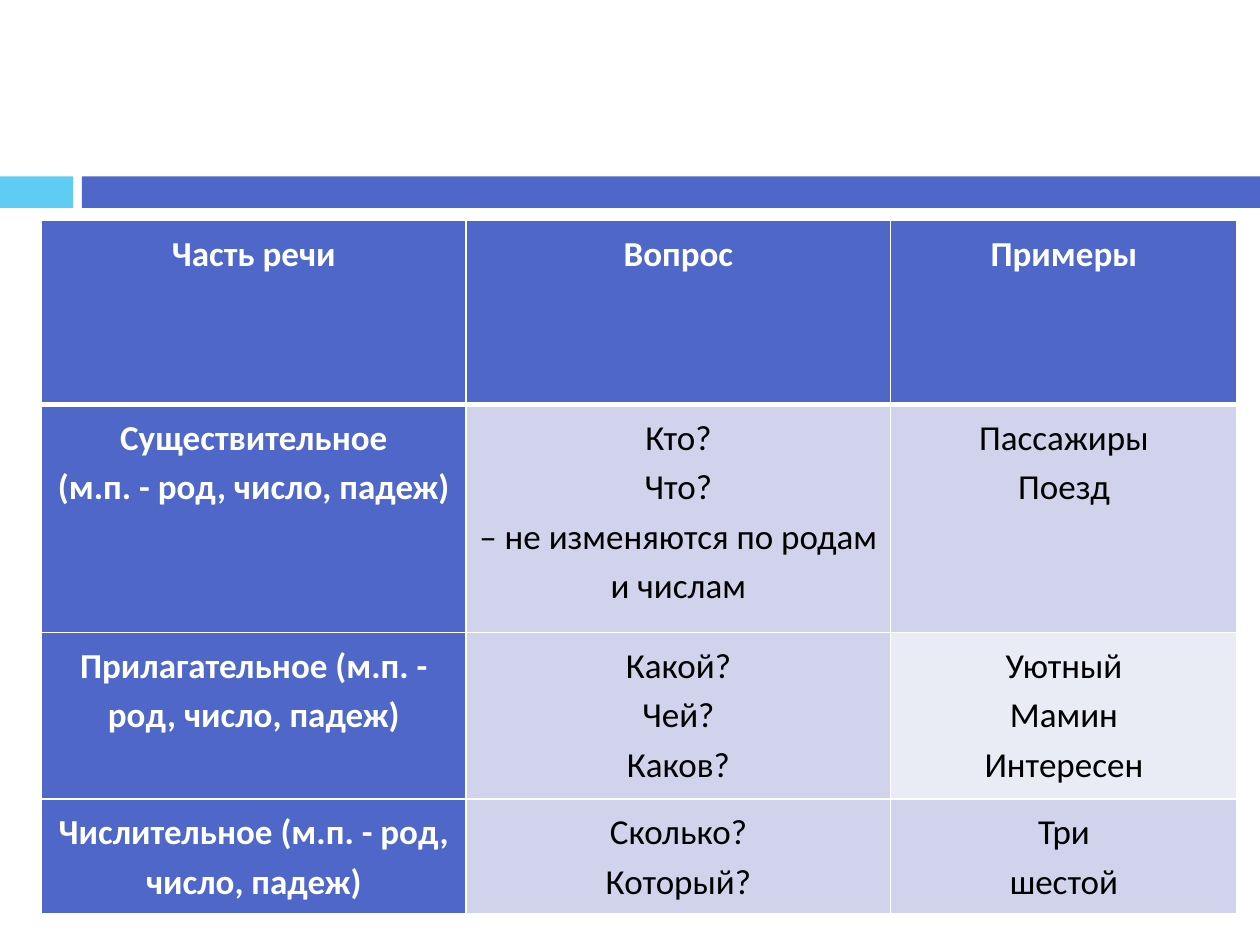
"""Builds a slide with a table of parts of speech, their questions and examples."""
from lxml import etree
from pptx import Presentation
from pptx.dml.color import RGBColor
from pptx.enum import shapes, text
from pptx.oxml.ns import qn
from pptx.util import Inches, Pt

THEME = {"blue": "4E67C8", "sky": "5ECCF3", "band": "D0D3EB", "pale": "E9EBF5",
         "light": "FFFFFF", "dark": "000000", "font": "Calibri", "size": 20}

ROWS = [
    ("Часть речи", "Вопрос", "Примеры"),
    ("Существительное\n(м.п. - род, число, падеж)",
     "Кто?\nЧто?\n– не изменяются по родам и числам", "Пассажиры\nПоезд"),
    ("Прилагательное (м.п. - род, число, падеж)",
     "Какой?\nЧей?\nКаков?", "Уютный\nМамин\nИнтересен"),
    ("Числительное (м.п. - род, число, падеж)",
     "Сколько?\nКоторый?", "Три\nшестой"),
]
WIDTHS = (3.37, 3.37, 2.75)
HEIGHTS = (1.46, 1.81, 1.32, 0.91)
PLACE = (0.33, 1.75)
BARS = [(0, 0.58, "sky"), (0.65, 9.35, "blue")]
BAR_TOP, BAR_HIGH = 1.4, 0.25


def tint(name):
    return RGBColor.from_string(THEME[name])


def paint(fill, name):
    fill.solid()
    fill.fore_color.rgb = tint(name)


def add_bar(slide, left, width, name):
    bar = slide.shapes.add_shape(
        shapes.MSO_SHAPE.RECTANGLE,
        *map(Inches, (left, BAR_TOP, width, BAR_HIGH)))
    bar.shadow.inherit = False
    paint(bar.fill, name)
    bar.line.fill.background()


def add_edges(cell, row):
    props = cell._tc.get_or_add_tcPr()
    thick = {(0, "B"), (1, "T")}
    for side in "LRTB":
        points = 3 if (row, side) in thick else 1
        line = etree.SubElement(props, qn(f"a:ln{side}"), w=str(Pt(points)))
        solid = etree.SubElement(line, qn("a:solidFill"))
        etree.SubElement(solid, qn("a:srgbClr"), val=THEME["light"])


def fill_cell(cell, words, row, col):
    head = row == 0 or col == 0
    add_edges(cell, row)
    paint(cell.fill, "blue" if head else "pale" if (row, col) == (2, 2) else "band")
    cell.text = words
    look = {"name": THEME["font"], "size": Pt(THEME["size"]), "bold": head}
    for para in cell.text_frame.paragraphs:
        para.alignment = text.PP_ALIGN.CENTER
        para.line_spacing = 1.15
        for run in para.runs:
            for key, value in look.items():
                setattr(run.font, key, value)
            run.font.color.rgb = tint("light" if head else "dark")


def add_grid(slide):
    size = (sum(WIDTHS), sum(HEIGHTS))
    table = slide.shapes.add_table(
        len(ROWS), len(WIDTHS), *map(Inches, PLACE + size)).table
    for column, width in zip(table.columns, WIDTHS):
        column.width = Inches(width)
    for r, (line, height) in enumerate(zip(ROWS, HEIGHTS)):
        table.rows[r].height = Inches(height)
        for c, words in enumerate(line):
            fill_cell(table.cell(r, c), words, r, c)


def main():
    deck = Presentation()
    deck.slide_width, deck.slide_height = Inches(10), Inches(7.5)
    slide = deck.slides.add_slide(deck.slide_layouts[6])
    for bar in BARS:
        add_bar(slide, *bar)
    add_grid(slide)
    deck.save("out.pptx")


if __name__ == "__main__":
    main()
